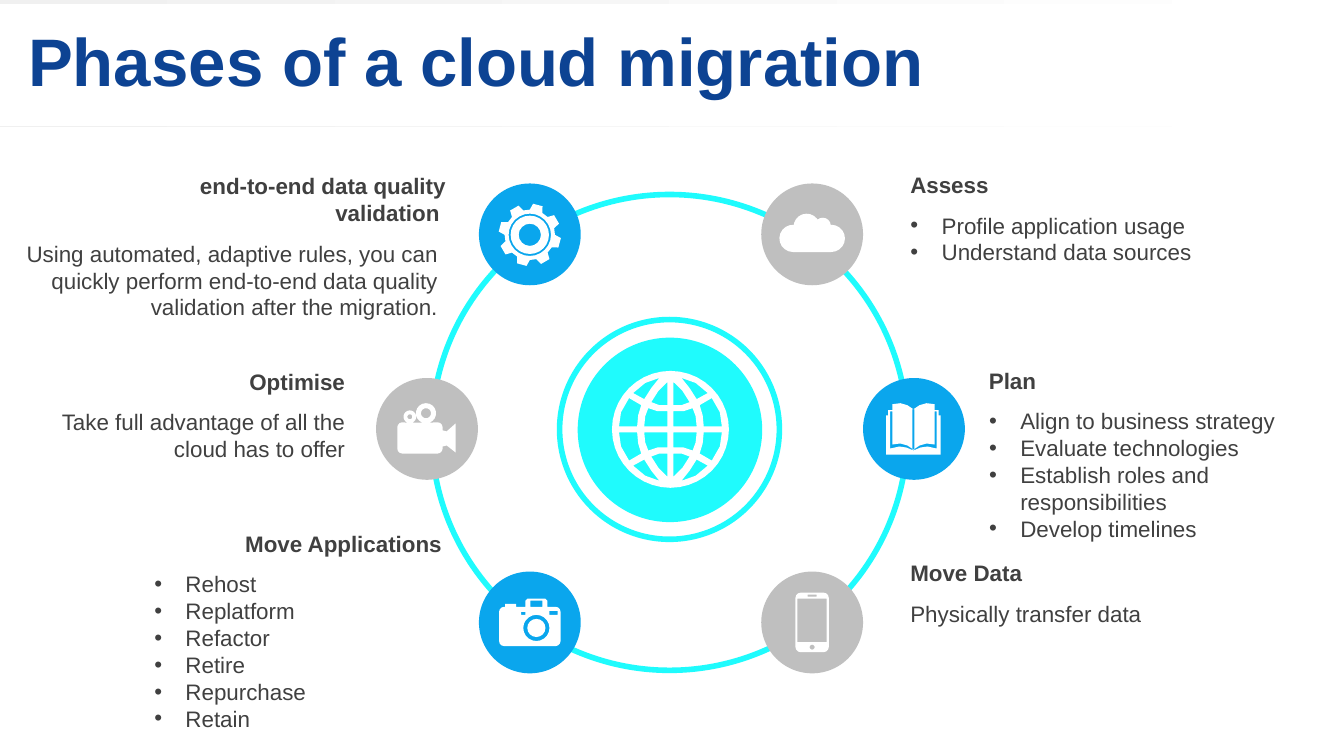
from dataclasses import dataclass
from math import cos, radians, sin

from lxml.etree import SubElement
from pptx import Presentation
from pptx.dml.color import RGBColor
from pptx.enum.shapes import MSO_SHAPE
from pptx.enum.text import MSO_ANCHOR, MSO_AUTO_SIZE, PP_ALIGN
from pptx.oxml.ns import qn
from pptx.util import Emu, Pt

PX = 9144  # one px is a hundredth of an inch
LEFT, RIGHT = PP_ALIGN.LEFT, PP_ALIGN.RIGHT


@dataclass(frozen=True)
class Theme:
    font: str = "Arial"
    title_size: int = 48
    text_size: int = 16
    title: str = "0D4393"
    text: str = "404040"
    cyan: str = "1FFBFD"
    blue: str = "0AA6ED"
    gray: str = "BFBFBF"
    band: str = "F0F0F0"
    white: str = "FFFFFF"


def rgb(color):
    return RGBColor.from_string(color)


def arc(x, y, radius, start=0, end=360, count=16):
    """Points around a centre, in degrees clockwise from the top."""
    turns = [radians(start + (end - start) * step / count) for step in range(count + 1)]
    return [(x + radius * sin(turn), y - radius * cos(turn)) for turn in turns]


def block(x, y, width, height, radius=0):
    """Corner points of a rectangle, rounded if a radius is given."""
    if not radius:
        return [(x, y), (x + width, y), (x + width, y + height), (x, y + height)]
    right, bottom = x + width - radius, y + height - radius
    corners = [(right, y + radius), (right, bottom), (x + radius, bottom), (x + radius, y + radius)]
    return [point for index, (cx, cy) in enumerate(corners)
            for point in arc(cx, cy, radius, 90 * index, 90 * index + 90, 3)]


def globe():
    x, y = 665, 426
    cells = [[(3, 3), (26, 3), (25, 13), (22, 21), (13, 18), (3, 18)],
             [(33, 3), (51, 3), (49, 17), (41, 31), (29, 24), (32, 14)],
             [(3, 24), (3, 47), (12, 38), (19, 27), (11, 24)],
             [(11, 51), (19, 41), (26, 30), (37, 36), (25, 46)]]
    return [arc(x, y, 58, count=40)] + [
        [(x + across * u, y + down * v) for u, v in cell]
        for cell in cells for across in (-1, 1) for down in (-1, 1)]


def gear():
    x, y = 525.5, 233
    corners = ((-15, 25), (-9, 31), (9, 31), (15, 25))
    rim = [(radians(15 + 45 * tooth + turn), reach)
           for tooth in range(8) for turn, reach in corners]
    return [[(x + r * sin(a), y - r * cos(a)) for a, r in rim],
            arc(x, y, 21, count=24), arc(x, y, 19, count=24), arc(x, y, 11)]


def cloud():
    return [arc(786.5, 236.5, 13.5, 180, 365, 10) + arc(800, 225, 13, -90, 50, 8)
            + arc(816, 224, 8, -40, 85, 6) + arc(824.5, 236.5, 13.5, 0, 180, 10)]


def book():
    def mirror(points):
        return [(1812 - x, y) for x, y in points]

    cover = [(879, 451), (879, 412), (881, 412), (881, 407), (885, 407),
             (885, 401), (893, 400), (900, 402), (906, 406)]
    crease = [(883, 408), (885, 408), (885, 441), (893, 440), (900, 442),
              (906, 446), (906, 447), (899, 444), (892, 443), (883, 445)]
    return [cover + mirror(cover)[::-1], crease, mirror(crease), block(905, 406, 2, 40)]


def phone():
    return [block(789, 588, 33, 59, 5), block(791, 594, 29, 43),
            block(801, 590, 9, 2), arc(805.5, 642, 2.5, count=10)]


def camera():
    body = (arc(500, 607, 5, -90, 0, 3) + [(501, 602), (501, 599), (512, 599), (512, 602),
            (521, 602), (521, 596), (523, 594), (541, 594), (543, 596), (543, 602)]
            + arc(551, 607, 5, 0, 90, 3) + arc(551, 636, 5, 90, 180, 3)
            + arc(500, 636, 5, 180, 270, 3))
    return [body, block(526, 596, 12, 6), block(517, 607, 4, 3), block(545, 606, 8, 4),
            arc(532, 623, 13, count=20), arc(532, 623, 9)]


def film_camera():
    body = (arc(399, 424, 5, -90, 0, 3) + arc(406.5, 413.5, 6.3, 200, 520)
            + arc(422.5, 410, 10, 200, 520) + arc(434, 424, 5, 0, 90, 3)
            + [(439, 427), (443, 428), (452, 420), (452, 449), (443, 442), (439, 443)]
            + arc(434, 445, 5, 90, 180, 3) + arc(399, 445, 5, 180, 270, 3))
    return [body, arc(422.5, 410, 5), arc(406.5, 413.5, 2.5, count=10)]


class Builder:
    def __init__(self, page, theme):
        self.page, self.theme = page, theme

    def place(self, shape, box):
        shape.left, shape.top, shape.width, shape.height = (Emu(v * PX) for v in box)

    def paint(self, shape, fill, line=None):
        shape.shadow.inherit = False
        shape.fill.solid()
        shape.fill.fore_color.rgb = rgb(fill)
        if line:
            shape.line.color.rgb = rgb(line)
            shape.line.width = Pt(4)
        else:
            shape.line.fill.background()

    def disc(self, x, y, size, fill, line=None):
        box = (Emu(v * PX) for v in (x, y, size, size))
        self.paint(self.page.shapes.add_shape(MSO_SHAPE.OVAL, *box), fill, line)

    def icon(self, contours):
        """Fill one white outline; contours inside another are holes."""
        scaled = [[(x * PX, y * PX) for x, y in contour] for contour in contours]
        pen = self.page.shapes.build_freeform(*scaled[0][0])
        for index, contour in enumerate(scaled):
            if index:
                pen.move_to(*contour[0])
            pen.add_line_segments(contour[1:], close=True)
        self.paint(pen.convert_to_shape(), self.theme.white)

    def band(self, box):
        """Put a pale gradient strip behind everything else."""
        shape = self.page.shapes.add_shape(MSO_SHAPE.RECTANGLE, *(Emu(v * PX) for v in box))
        self.paint(shape, self.theme.band)
        shape.fill.gradient()
        shape.fill.gradient_angle = 0
        for stop, color in zip(shape.fill.gradient_stops, (self.theme.band, self.theme.white)):
            stop.color.rgb = rgb(color)
        self.page.shapes.element.insert(2, shape.element)

    def style(self, para, size, color, bold, align):
        para.alignment = align
        para.space_before = Pt(0)
        font = para.font
        font.name, font.size, font.bold = self.theme.font, Pt(size), bold
        font.color.rgb = rgb(color)

    def title(self, text, box):
        shape = self.page.shapes.title
        self.place(shape, box)
        shape.fill.solid()
        shape.fill.fore_color.rgb = rgb(self.theme.white)
        frame = shape.text_frame
        frame.text = text
        frame.auto_size = MSO_AUTO_SIZE.NONE
        frame.vertical_anchor = MSO_ANCHOR.MIDDLE
        frame.margin_left = Emu(28 * PX)
        para = frame.paragraphs[0]
        para.line_spacing = 0.9
        self.style(para, self.theme.title_size, self.theme.title, True, LEFT)

    def text(self, text, box, align, bold=False):
        shape = self.page.shapes.add_textbox(*(Emu(v * PX) for v in box))
        frame = shape.text_frame
        frame.word_wrap = True
        frame.text = text
        self.style(frame.paragraphs[0], self.theme.text_size, self.theme.text, bold, align)

    def bullets(self, holder, items, box):
        self.place(holder, box)
        frame = holder.text_frame
        frame.text = "\n".join(items)
        frame.auto_size = MSO_AUTO_SIZE.NONE
        frame.vertical_anchor = MSO_ANCHOR.TOP
        for para in frame.paragraphs:
            props = para._p.get_or_add_pPr()
            props.set("marL", str(31 * PX))
            props.set("indent", str(-31 * PX))
            SubElement(props, qn("a:buFont"), typeface=self.theme.font)
            SubElement(props, qn("a:buChar"), char="•")
            self.style(para, self.theme.text_size, self.theme.text, False, LEFT)


PHASES = [  # heading, its box, body (a list is bulleted), its box, alignment
    ("Assess", (893, 165, 305, 37),
     ["Profile application usage", "Understand data sources"], (893, 205, 305, 64), LEFT),
    ("Plan", (971, 359, 305, 37),
     ["Align to business strategy", "Evaluate technologies",
      "Establish roles and responsibilities", "Develop timelines"], (971, 399, 305, 145), LEFT),
    ("Move Data", (893, 550, 305, 37), "Physically transfer data", (893, 590, 305, 37), LEFT),
    ("Move Applications", (143, 521, 305, 37),
     ["Rehost", "Replatform", "Refactor", "Retire", "Repurchase", "Retain"],
     (143, 561, 305, 172), RIGHT),
    ("Optimise", (47, 360, 305, 37),
     "Take full advantage of all the cloud has to offer", (47, 400, 305, 64), RIGHT),
    ("end-to-end data quality validation ", (96, 166, 356, 64),
     "Using automated, adaptive rules, you can quickly perform end-to-end data quality "
     "validation after the migration.", (16, 233, 428, 91), RIGHT),
]
NODES = [(755, 182, cloud), (856, 375, book), (755, 567, phone),
         (475, 567, camera), (373, 375, film_camera), (475, 182, gear)]


def main():
    deck = Presentation()
    deck.slide_width, deck.slide_height = Emu(1333 * PX), Emu(750 * PX)
    page = deck.slides.add_slide(deck.slide_layouts.get_by_name("Comparison"))
    theme = Theme()
    build = Builder(page, theme)
    holders = [holder for holder in page.placeholders if holder.placeholder_format.idx]
    build.band((0, 0, 1328, 126))
    build.title("Phases of a cloud migration", (0, 4, 1333, 121))
    build.disc(428, 193, 472, theme.white, theme.cyan)
    build.disc(555, 317, 218, theme.white, theme.cyan)
    build.disc(573, 335, 183, theme.cyan)
    build.icon(globe())
    for index, (x, y, symbol) in enumerate(NODES):
        build.disc(x, y, 101, theme.blue if index % 2 else theme.gray)
        build.icon(symbol())
    for heading, heading_box, body, body_box, align in PHASES:
        build.text(heading, heading_box, align, bold=True)
        if isinstance(body, list):
            build.bullets(holders.pop(), body, body_box)
        else:
            build.text(body, body_box, align)
    for holder in holders:
        holder.element.getparent().remove(holder.element)
    deck.save("out.pptx")


if __name__ == "__main__":
    main()
